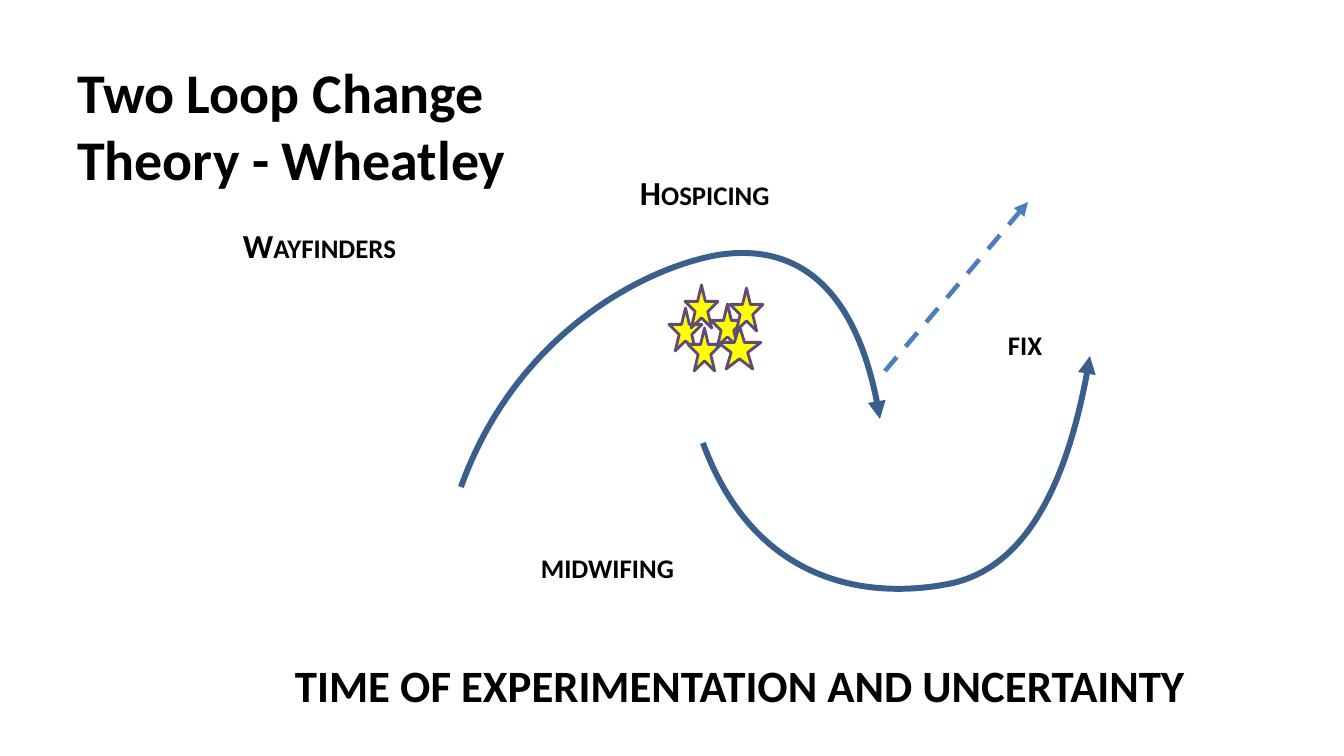
"""Build the Two Loop Change Theory slide."""
from dataclasses import dataclass

from lxml.etree import SubElement
from pptx import Presentation
from pptx.dml.color import RGBColor
from pptx.enum.dml import MSO_LINE
from pptx.enum.shapes import MSO_CONNECTOR, MSO_SHAPE
from pptx.enum.text import MSO_ANCHOR, MSO_AUTO_SIZE, PP_ALIGN
from pptx.oxml.ns import qn
from pptx.util import Pt


@dataclass(frozen=True)
class Theme:
    font: str = "Calibri"
    ink: str = "000000"
    loop: str = "3A5F8C"
    escape: str = "4B7EBC"
    star: str = "FFFF00"
    star_edge: str = "5F4A78"
    title_size: int = 40
    banner_size: int = 32
    label_size: int = 24
    loop_width: float = 4.25
    escape_width: float = 3.25
    star_width: int = 2


THEME = Theme()
PX = 914400 / 100.8
SLIDE = (1344, 756)
TITLE = ("Two Loop Change Theory - Wheatley", (67, 52, 521, 146))
BANNER = ("TIME OF EXPERIMENTATION AND UNCERTAINTY", (285, 653, 919, 65))
LABELS = [
    ("Hospicing", (630, 167, 164, 50)),
    ("fix", (998, 317, 59, 50)),
    ("midwifing", (531, 540, 160, 50)),
    ("Wayfinders", (233, 220, 322, 50)),
]
LOOPS = [
    ((461, 487), [((517, 331), (648, 267), (718, 255)),
                  ((788, 244), (858, 279), (880, 419))]),
    ((703, 443), [((760, 598), (888, 597), (953, 583)),
                  ((1017, 568), (1067, 497), (1090, 356))]),
]
ESCAPE = ((885, 371), (1028, 202))
STAR_HEIGHT = 43
STARS = [(669, 308, 33), (685, 285, 33), (688, 328, 33),
         (711, 304, 33), (718, 326, 43), (730, 288, 33)]


def emu(*lengths):
    return [round(length * PX) for length in lengths]


def style_line(line, color, width, arrow=False):
    line.color.rgb = RGBColor.from_string(color)
    line.width = Pt(width)
    if arrow:
        SubElement(line._get_or_add_ln(), qn("a:tailEnd"), type="triangle")


def write(box, text, size, small_caps=False, wrap=False):
    frame = box.text_frame
    frame.text = text
    frame.word_wrap = wrap
    frame.auto_size = MSO_AUTO_SIZE.NONE
    frame.vertical_anchor = MSO_ANCHOR.TOP
    para = frame.paragraphs[0]
    para.alignment = PP_ALIGN.LEFT
    font = para.font
    font.name, font.size, font.bold = THEME.font, Pt(size), True
    font.color.rgb = RGBColor.from_string(THEME.ink)
    if small_caps:
        font._rPr.set("cap", "small")


def add_title(page):
    text, place = TITLE
    title = page.shapes.title
    title.left, title.top, title.width, title.height = emu(*place)
    write(title, text, THEME.title_size, wrap=True)


def add_loop(page, start, curves):
    builder = page.shapes.build_freeform(*emu(*start))
    builder.add_line_segments([emu(*curve[-1]) for curve in curves], close=False)
    loop = builder.convert_to_shape()
    segments = list(loop._element.iter(qn("a:lnTo")))
    for segment, curve in zip(segments, curves):
        segment.tag = qn("a:cubicBezTo")
        segment.remove(segment[0])
        for point in curve:
            x, y = emu(*point)
            SubElement(segment, qn("a:pt"), x=str(x - loop.left), y=str(y - loop.top))
    loop.shadow.inherit = False
    loop.fill.background()
    style_line(loop.line, THEME.loop, THEME.loop_width, arrow=True)


def add_escape(page):
    start, end = ESCAPE
    arrow = page.shapes.add_connector(MSO_CONNECTOR.STRAIGHT, *emu(*start, *end))
    arrow.line.dash_style = MSO_LINE.DASH
    style_line(arrow.line, THEME.escape, THEME.escape_width, arrow=True)
    SubElement(arrow._element.spPr, qn("a:effectLst"))


def add_star(page, left, top, width):
    star = page.shapes.add_shape(MSO_SHAPE.STAR_5_POINT, *emu(left, top, width, STAR_HEIGHT))
    star.shadow.inherit = False
    star.fill.solid()
    star.fill.fore_color.rgb = RGBColor.from_string(THEME.star)
    style_line(star.line, THEME.star_edge, THEME.star_width)


def main():
    deck = Presentation()
    deck.slide_width, deck.slide_height = emu(*SLIDE)
    page = deck.slides.add_slide(deck.slide_layouts[5])
    add_title(page)
    for start, curves in LOOPS:
        add_loop(page, start, curves)
    add_escape(page)
    for star in STARS:
        add_star(page, *star)
    for text, place in LABELS:
        write(page.shapes.add_textbox(*emu(*place)), text, THEME.label_size, small_caps=True)
    text, place = BANNER
    write(page.shapes.add_textbox(*emu(*place)), text, THEME.banner_size)
    deck.save("out.pptx")


if __name__ == "__main__":
    main()
